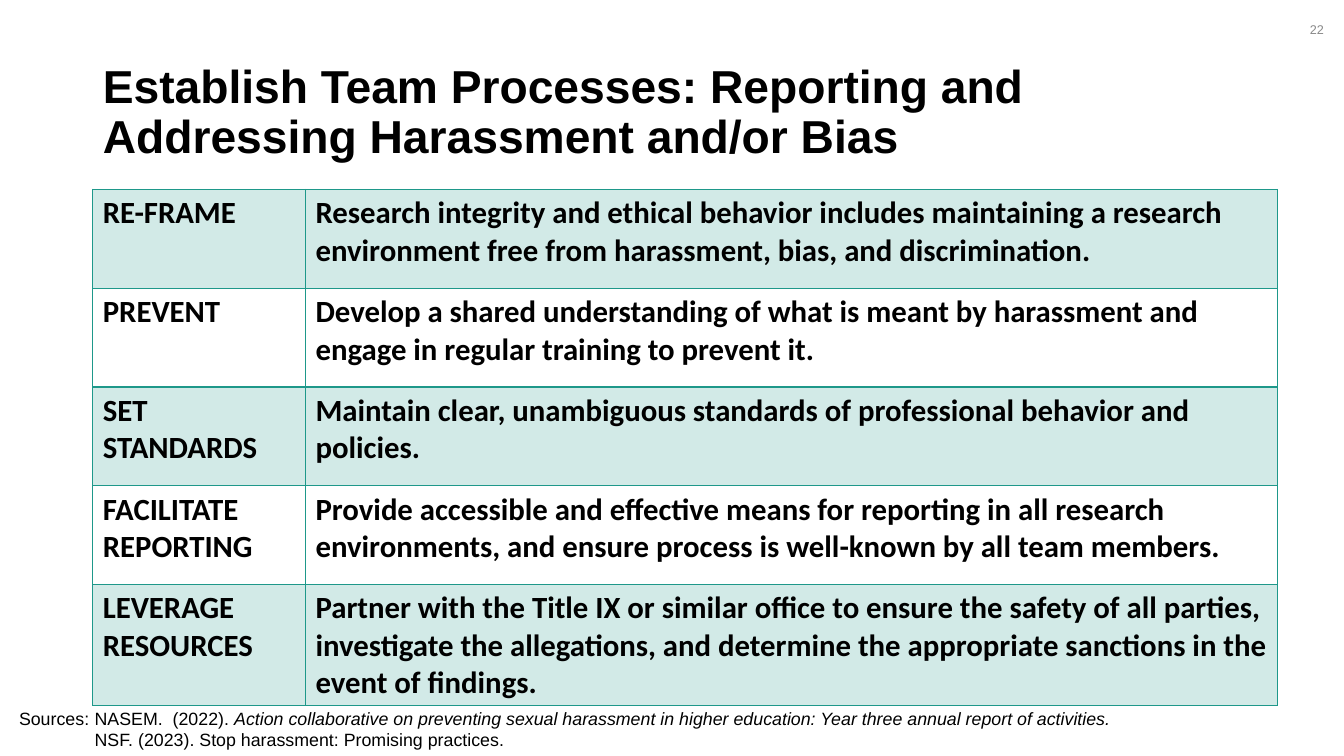
from lxml import etree
from pptx import Presentation
from pptx.dml.color import RGBColor
from pptx.enum.text import MSO_ANCHOR, PP_ALIGN
from pptx.oxml.ns import qn
from pptx.util import Inches, Pt

MIDDLE = MSO_ANCHOR.MIDDLE
LEFT, RIGHT = PP_ALIGN.LEFT, PP_ALIGN.RIGHT
BLACK, GREY, TEAL = "000000", "888888", "1E988A"

TITLE = "Establish Team Processes: Reporting and Addressing Harassment and/or Bias"
NUMBER = "22"
STEPS = [
    ("RE-FRAME", "Research integrity and ethical behavior includes maintaining a "
     "research environment free from harassment, bias, and discrimination."),
    ("PREVENT", "Develop a shared understanding of what is meant by harassment and "
     "engage in regular training to prevent it."),
    ("SET STANDARDS", "Maintain clear, unambiguous standards of professional "
     "behavior and policies."),
    ("FACILITATE REPORTING", "Provide accessible and effective means for reporting in "
     "all research environments, and ensure process is well-known by all team members."),
    ("LEVERAGE RESOURCES", "Partner with the Title IX or similar office to ensure the "
     "safety of all parties, investigate the allegations, and determine the appropriate "
     "sanctions in the event of findings."),
]
# Each source is a list of (text, italic) pairs
SOURCES = [
    [("Sources: \tNASEM.  (2022). ", False),
     ("Action collaborative on preventing sexual harassment in higher education: "
      "Year three annual report of activities.", True)],
    [("\tNSF. (2023). Stop harassment: Promising practices.", False)],
]
COLS = (2.11, 9.64)
ROW = 0.98
INDENT = Inches(0.75)


def rgb(code):
    return RGBColor.from_string(code)


def style(run, name, size, color, bold=False, italic=False):
    font = run.font
    font.name, font.size = name, Pt(size)
    font.bold, font.italic = bold, italic
    font.color.rgb = rgb(color)


def add_box(slide, left, top, width, height):
    frame = slide.shapes.add_textbox(
        Inches(left), Inches(top), Inches(width), Inches(height)).text_frame
    frame.word_wrap = True
    return frame


def add_borders(cell):
    props = cell._tc.get_or_add_tcPr()
    for side in ("lnL", "lnR", "lnT", "lnB"):
        line = etree.SubElement(props, qn(f"a:{side}"), w=str(Pt(1)))
        fill = etree.SubElement(line, qn("a:solidFill"))
        etree.SubElement(fill, qn("a:srgbClr"), val=TEAL)


def tint(cell):
    """Fill the cell with teal at 20% opacity."""
    cell.fill.solid()
    cell.fill.fore_color.rgb = rgb(TEAL)
    color = cell._tc.tcPr.find(qn("a:solidFill")).find(qn("a:srgbClr"))
    etree.SubElement(color, qn("a:alpha"), val="20000")


def add_title(slide):
    title = slide.shapes.title
    title.left, title.top = Inches(0.92), Inches(0.4)
    title.width, title.height = Inches(11.5), Inches(1.45)
    frame = title.text_frame
    frame.text = TITLE
    frame.vertical_anchor = MIDDLE
    para = frame.paragraphs[0]
    para.alignment, para.line_spacing = LEFT, 0.9
    style(para.runs[0], "Arial", 33, BLACK, bold=True)


def add_number(slide):
    frame = add_box(slide, 10.23, 0.09, 3, 0.4)
    frame.text = NUMBER
    frame.vertical_anchor = MIDDLE
    para = frame.paragraphs[0]
    para.alignment = RIGHT
    style(para.runs[0], "Arial", 9, GREY)


def add_steps(slide):
    table = slide.shapes.add_table(
        len(STEPS), len(COLS), Inches(0.92), Inches(1.88),
        Inches(sum(COLS)), Inches(ROW * len(STEPS))).table
    table.first_row = table.horz_banding = False
    for col, width in zip(table.columns, COLS):
        col.width = Inches(width)
    for r, step in enumerate(STEPS):
        table.rows[r].height = Inches(ROW)
        for c, text in enumerate(step):
            cell = table.cell(r, c)
            cell.text = text
            style(cell.text_frame.paragraphs[0].runs[0], "Calibri", 22, BLACK, bold=True)
            add_borders(cell)
            if r % 2:
                cell.fill.background()
            else:
                tint(cell)


def add_sources(slide):
    frame = add_box(slide, 0.09, 6.97, 12.98, 0.53)
    for i, source in enumerate(SOURCES):
        para = frame.add_paragraph() if i else frame.paragraphs[0]
        props = para._p.get_or_add_pPr()
        props.set("marL", str(INDENT))
        props.set("indent", str(-INDENT))
        for text, italic in source:
            run = para.add_run()
            run.text = text
            style(run, "Arial", 12.7, BLACK, italic=italic)


def main():
    deck = Presentation()
    deck.slide_width, deck.slide_height = Inches(13.33), Inches(7.5)
    slide = deck.slides.add_slide(deck.slide_layouts[5])
    add_title(slide)
    add_number(slide)
    add_steps(slide)
    add_sources(slide)
    deck.save("out.pptx")


if __name__ == "__main__":
    main()
